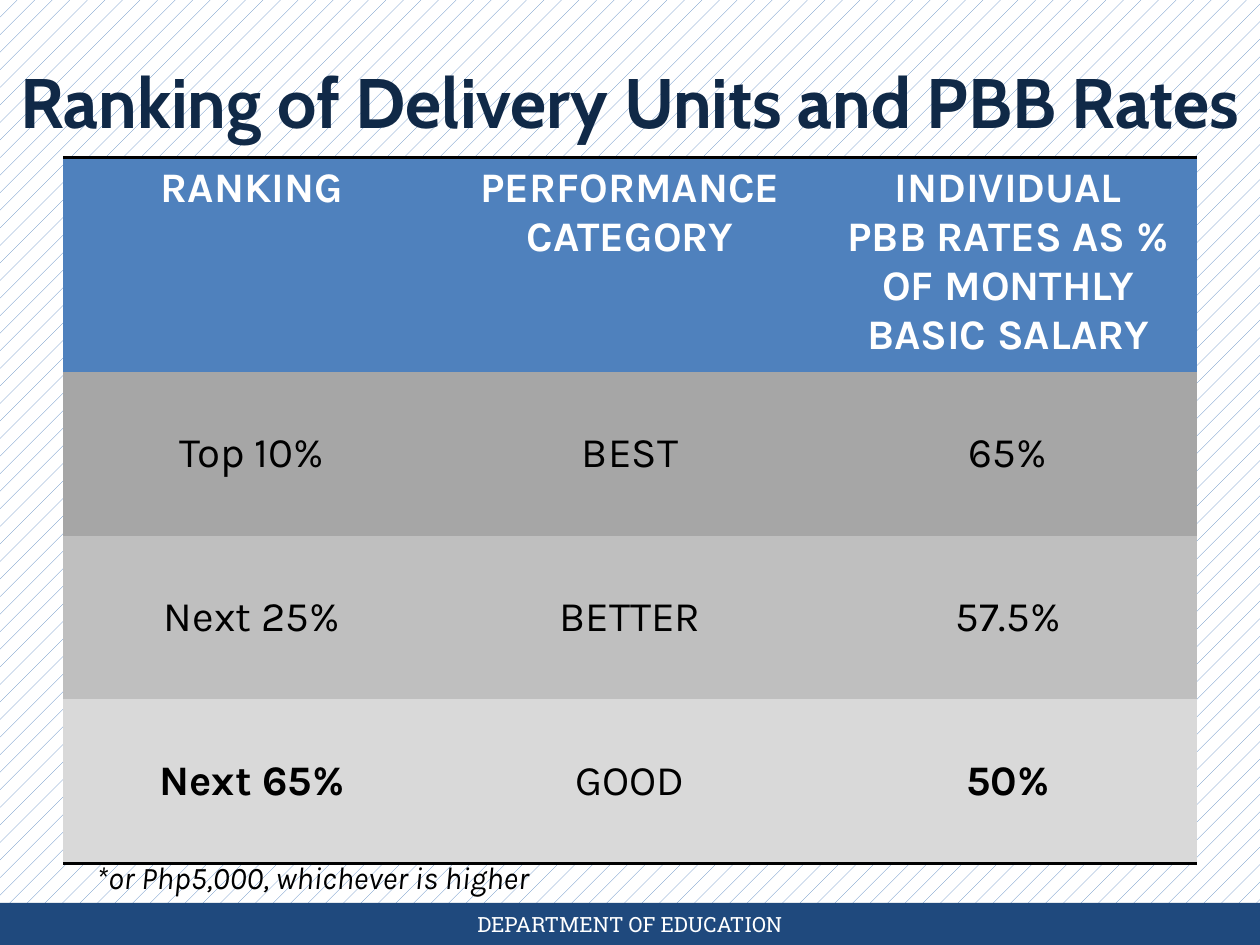
from lxml.etree import SubElement
from pptx import Presentation
from pptx.dml.color import RGBColor
from pptx.enum.dml import MSO_PATTERN
from pptx.enum.shapes import MSO_SHAPE
from pptx.enum.text import MSO_ANCHOR, PP_ALIGN
from pptx.oxml.ns import qn
from pptx.util import Inches, Pt

COLORS = {
    "white": "FFFFFF", "black": "000000", "navy": "102947",
    "footer": "1F497D", "blue": "4F81BD",
    "dark": "A6A6A6", "middle": "BFBFBF", "light": "D9D9D9",
}

# The slide is a grid of 120 columns by 90 rows of square units.
UNIT = Inches(1 / 12)
COLUMNS, ROWS = 120, 90


def write_text(frame, text, font="Karla", size=24, color="black", bold=False,
               italic=False, align=PP_ALIGN.CENTER):
    """Fill a text frame with one paragraph per line of text."""
    frame.word_wrap = True
    for index, line in enumerate(text.split("\n")):
        para = frame.paragraphs[0] if index == 0 else frame.add_paragraph()
        para.alignment = align
        span = para.add_run()
        span.text = line
        span.font.name, span.font.size = font, Pt(size)
        span.font.bold, span.font.italic = bold, italic
        span.font.color.rgb = RGBColor.from_string(COLORS[color])


def set_borders(cell, ruled):
    """Draw black lines on the ruled sides and clear the other sides."""
    properties = cell._tc.get_or_add_tcPr()
    for side in "LRTB":
        line = SubElement(properties, qn(f"a:ln{side}"), w=str(Pt(2)))
        if side in ruled:
            fill = SubElement(line, qn("a:solidFill"))
            SubElement(fill, qn("a:srgbClr"), val=COLORS["black"])
        else:
            SubElement(line, qn("a:noFill"))


deck = Presentation()
deck.slide_width, deck.slide_height = COLUMNS * UNIT, ROWS * UNIT
page = deck.slides.add_slide(deck.slide_layouts[6])

backdrop = page.background.fill
backdrop.patterned()
backdrop.pattern = MSO_PATTERN.PERCENT_5
backdrop.fore_color.rgb = RGBColor.from_string(COLORS["blue"])
backdrop.back_color.rgb = RGBColor.from_string(COLORS["white"])

# Footer band
band = page.shapes.add_shape(MSO_SHAPE.RECTANGLE, 0, 86 * UNIT, COLUMNS * UNIT, 4 * UNIT)
band.shadow.inherit = False
band.fill.solid()
band.fill.fore_color.rgb = RGBColor.from_string(COLORS["footer"])
band.line.fill.background()

# Text boxes: left, top, width, height in units, then anchor, wording and format
texts = [
    (41, 86, 38, 4, MSO_ANCHOR.MIDDLE, "DEPARTMENT OF EDUCATION",
     dict(font="Roboto Slab", size=12, color="white")),
    (0, 5, COLUMNS, 9.25, MSO_ANCHOR.TOP, "Ranking of Delivery Units and PBB Rates",
     dict(font="Cabin", size=40, color="navy", bold=True)),
    (8, 81.1, 52, 4.8, MSO_ANCHOR.TOP, "*or Php5,000, whichever is higher",
     dict(size=18, italic=True, align=PP_ALIGN.LEFT)),
]
for left, top, width, height, anchor, text, style in texts:
    box = page.shapes.add_textbox(*(int(n * UNIT) for n in (left, top, width, height)))
    box.text_frame.vertical_anchor = anchor
    write_text(box.text_frame, text, **style)

# Table rows: height in units, fill, ruled sides, columns in bold, wording
table_rows = [
    (20.4, "blue", "TB", (0, 1, 2),
     ("RANKING", "PERFORMANCE CATEGORY",
      "INDIVIDUAL\nPBB RATES AS % OF MONTHLY BASIC SALARY")),
    (15.6, "dark", "", (), ("Top 10%", "BEST", "65%")),
    (15.6, "middle", "", (), ("Next 25%", "BETTER", "57.5%")),
    (15.6, "light", "B", (0, 2), ("Next 65%", "GOOD", "50%")),
]
table_height = sum(row[0] for row in table_rows)
table = page.shapes.add_table(len(table_rows), 3, 6 * UNIT, 15 * UNIT,
                              108 * UNIT, int(table_height * UNIT)).table
table.first_row = table.horz_banding = False

for r, (height, fill, ruled, bold_columns, wording) in enumerate(table_rows):
    header = r == 0
    table.rows[r].height = int(height * UNIT)
    for c, text in enumerate(wording):
        cell = table.cell(r, c)
        set_borders(cell, ruled)
        cell.fill.solid()
        cell.fill.fore_color.rgb = RGBColor.from_string(COLORS[fill])
        cell.vertical_anchor = MSO_ANCHOR.TOP if header else MSO_ANCHOR.MIDDLE
        write_text(cell.text_frame, text, bold=c in bold_columns,
                   color="white" if header else "black")

deck.save("out.pptx")
